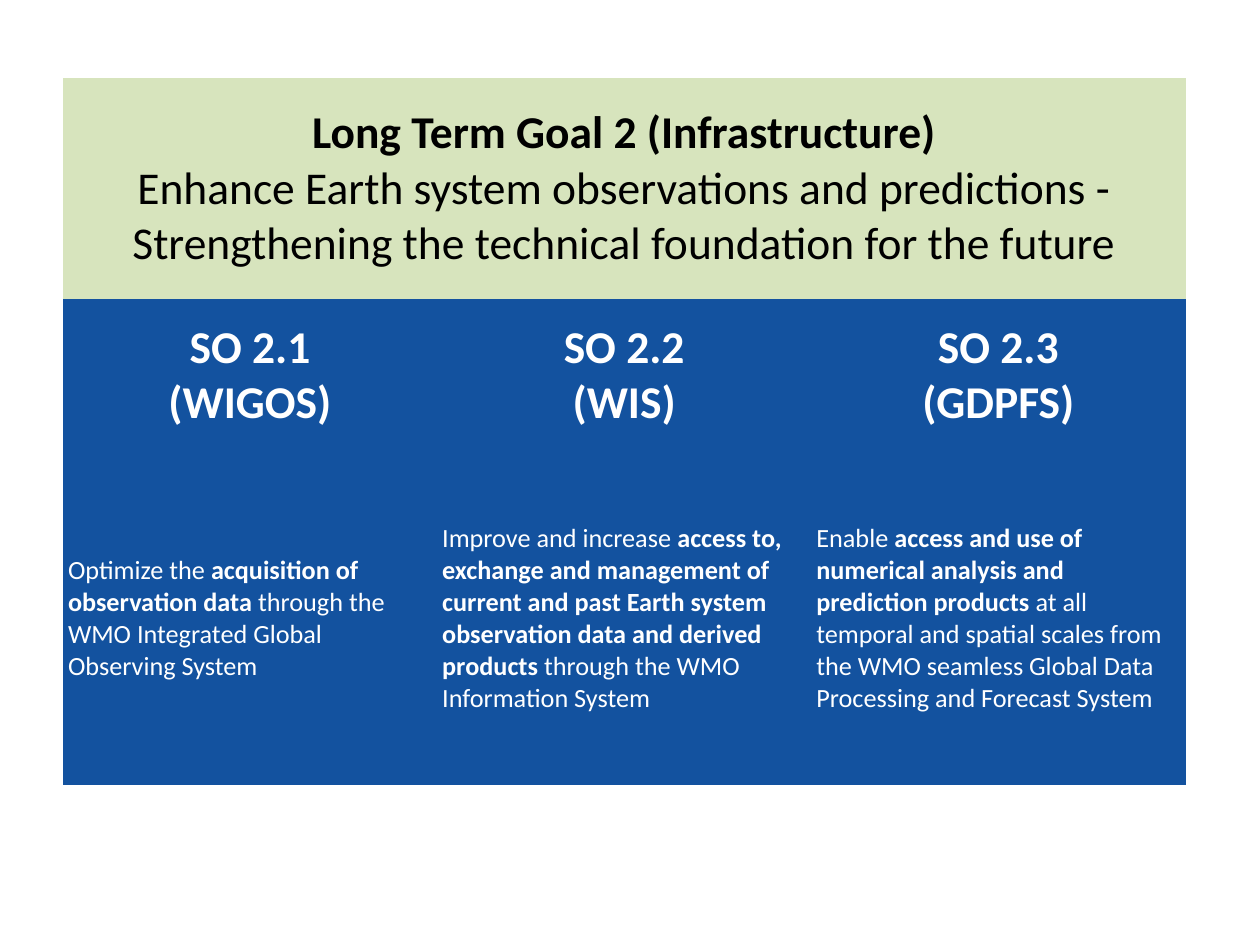
from dataclasses import dataclass

from pptx import Presentation
from pptx.dml.color import RGBColor
from pptx.enum import text as t
from pptx.oxml import ns
from pptx.util import Inches, Pt

BLACK = RGBColor(0x00, 0x00, 0x00)
WHITE = RGBColor(0xFF, 0xFF, 0xFF)
GREEN = RGBColor(0xD7, 0xE4, 0xBD)
BLUE = RGBColor(0x13, 0x52, 0x9F)
FONT = "Calibri"
PLAIN_STYLE = "{2D5ABB26-0587-4C30-8999-92F81FD0307C}"
COLUMN_WIDTH = 2.97
ROW_HEIGHTS = (1.75, 1.22, 2.64)


@dataclass(frozen=True)
class Objective:
    number: str
    programme: str
    opening: str
    emphasis: str
    ending: str


OBJECTIVES = (
    Objective("SO 2.1", "(WIGOS)", "Optimize the ", "acquisition of observation data",
              " through the WMO Integrated Global Observing System"),
    Objective("SO 2.2", "(WIS)", "Improve and increase ",
              "access to, exchange and management of current and past Earth system "
              "observation data and derived products ",
              "through the WMO Information System"),
    Objective("SO 2.3", "(GDPFS)", "Enable ",
              "access and use of numerical analysis and prediction products ",
              "at all temporal and spatial scales from the WMO seamless Global Data "
              "Processing and Forecast System"),
)


def add_text(paragraph, content: str, *, size: float, color: RGBColor, bold: bool = False) -> None:
    run = paragraph.add_run()
    run.text = content
    run.font.name = FONT
    run.font.size = Pt(size)
    run.font.bold = bold
    run.font.color.rgb = color


def format_cell(cell, fill: RGBColor) -> None:
    cell.fill.solid()
    cell.fill.fore_color.rgb = fill
    cell.vertical_anchor = t.MSO_ANCHOR.MIDDLE
    cell.margin_left = cell.margin_right = Inches(0.04)
    cell.margin_top = cell.margin_bottom = Inches(0.02)


def fill_goal(cell) -> None:
    format_cell(cell, GREEN)
    paragraph = cell.text_frame.paragraphs[0]
    paragraph.alignment = t.PP_ALIGN.CENTER
    add_text(paragraph, "Long Term Goal 2 (Infrastructure)", size=26, color=BLACK, bold=True)
    paragraph.add_line_break()
    add_text(paragraph, "Enhance Earth system observations and predictions - "
             "Strengthening the technical foundation for the future", size=26, color=BLACK)


def fill_objective(heading_cell, description_cell, objective: Objective) -> None:
    format_cell(heading_cell, BLUE)
    format_cell(description_cell, BLUE)
    frame = heading_cell.text_frame
    for paragraph, line in ((frame.paragraphs[0], objective.number),
                            (frame.add_paragraph(), objective.programme)):
        paragraph.alignment = t.PP_ALIGN.CENTER
        add_text(paragraph, line, size=26, color=WHITE, bold=True)
    description = description_cell.text_frame.paragraphs[0]
    for content, bold in ((objective.opening, False), (objective.emphasis, True),
                          (objective.ending, False)):
        add_text(description, content, size=15, color=WHITE, bold=bold)


def main() -> None:
    presentation = Presentation()
    presentation.slide_width = Inches(10)
    presentation.slide_height = Inches(7.5)
    slide = presentation.slides.add_slide(presentation.slide_layouts[6])
    frame = slide.shapes.add_table(len(ROW_HEIGHTS), len(OBJECTIVES), Inches(0.5), Inches(0.62),
                                   Inches(COLUMN_WIDTH * len(OBJECTIVES)),
                                   Inches(sum(ROW_HEIGHTS)))
    next(frame.element.iter(ns.qn("a:tableStyleId"))).text = PLAIN_STYLE
    table = frame.table
    table.first_row = table.horz_banding = False
    for column in table.columns:
        column.width = Inches(COLUMN_WIDTH)
    for row, height in zip(table.rows, ROW_HEIGHTS):
        row.height = Inches(height)
    goal_cell = table.cell(0, 0)
    goal_cell.merge(table.cell(0, len(OBJECTIVES) - 1))
    fill_goal(goal_cell)
    for index, objective in enumerate(OBJECTIVES):
        fill_objective(table.cell(1, index), table.cell(2, index), objective)
    presentation.save("out.pptx")


if __name__ == "__main__":
    main()
